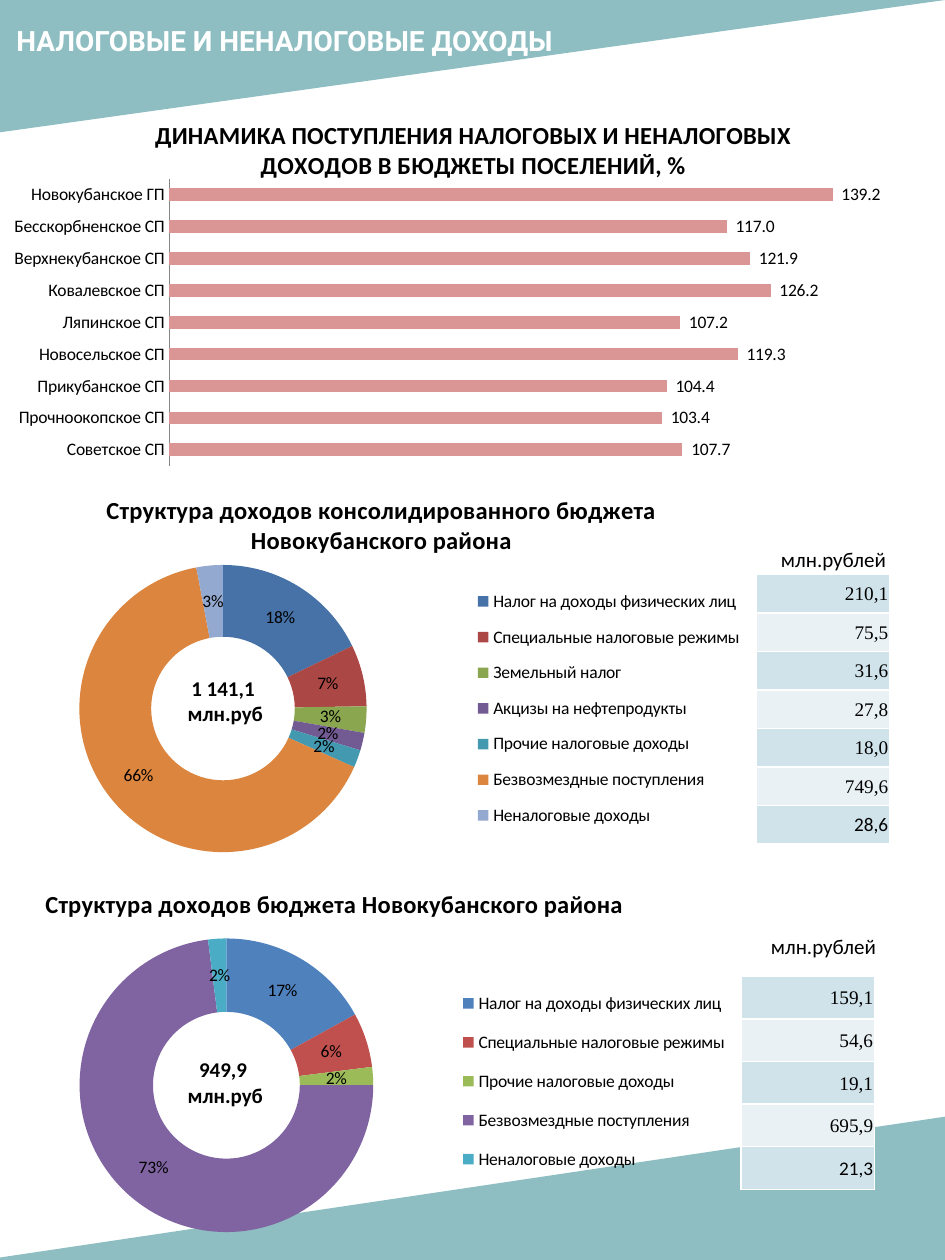
"""Build the tax and non-tax revenue slide."""
from dataclasses import dataclass
from typing import Any, NamedTuple, Optional

from lxml.etree import SubElement
from pptx import Presentation
from pptx.chart.chart import Chart
from pptx.chart.data import CategoryChartData
from pptx.dml.color import RGBColor
from pptx.enum.chart import XL_CHART_TYPE, XL_LABEL_POSITION, XL_LEGEND_POSITION, XL_TICK_LABEL_POSITION, XL_TICK_MARK
from pptx.enum.shapes import MSO_SHAPE
from pptx.enum.text import MSO_ANCHOR, MSO_AUTO_SIZE, PP_ALIGN
from pptx.oxml import parse_xml
from pptx.oxml.ns import nsdecls, qn
from pptx.util import Inches, Pt


@dataclass(frozen=True)
class Theme:
    """Colours, fonts and type sizes of the slide."""
    accent: str = "519AA0"
    white: str = "FFFFFF"
    black: str = "000000"
    axis: str = "868686"
    bar: str = "D99694"
    bands: tuple = ("D0E3EA", "E9F1F5")
    muted: tuple = ("4672A8", "AB4744", "8AA64F", "725A92", "4299B0", "DC853E", "93A9CF")
    bright: tuple = ("4F81BD", "C0504D", "9BBB59", "8064A2", "4BACC6")
    body: str = "Calibri"
    heading: str = "Roboto"
    figures: str = "Times New Roman"
    heading_size: int = 16
    chart_title_size: int = 14
    text_size: int = 12
    table_size: int = 11
    chart_size: int = 10


class Box(NamedTuple):
    """Left, top, width and height, in inches or as chart fractions."""
    left: float
    top: float
    width: float
    height: float

    def lengths(self) -> list:
        """Return the four values as lengths."""
        return [Inches(value) for value in self]


class Triangle(NamedTuple):
    """A corner triangle."""
    box: Box
    flip: str


class Label(NamedTuple):
    """A text box."""
    box: Box
    lines: tuple
    bold: bool
    wrap: bool
    alignment: Any


class Column(NamedTuple):
    """A one-column table of amounts."""
    box: Box
    amounts: tuple


class Graph(NamedTuple):
    """A chart with one series; a legend box makes it a doughnut."""
    box: Box
    title: str
    title_left: float
    title_top: float
    plot: Box
    colors: tuple
    values: dict
    legend: Optional[Box] = None


THEME = Theme()
INCOME_TAX, SPECIAL = "Налог на доходы физических лиц", "Специальные налоговые режимы"
OTHER, GRANTS, NON_TAX = "Прочие налоговые доходы", "Безвозмездные поступления", "Неналоговые доходы"
TRIANGLES = (
    Triangle(Box(0, 0, 7.5, 1.05), "flipH"),
    Triangle(Box(-0.13, 8.86, 7.65, 1.14), "flipV"),
)
UNITS = tuple(Label(Box(left, top, 1.1, 0.3), ("млн.рублей",), False, False, PP_ALIGN.LEFT)
              for left, top in ((6.1, 4.29), (6.02, 7.36)))
TOTALS = tuple(Label(Box(1.33, top, 0.88, 0.5), (total, " млн.руб"), True, True, PP_ALIGN.CENTER)
               for top, total in ((5.31, "1 141,1"), (8.34, "949,9")))
COLUMNS = (
    Column(Box(6, 4.56, 1.06, 2.14), ("210,1", "75,5", "31,6", "27,8", "18,0", "749,6", "28,6")),
    Column(Box(5.88, 7.75, 1.06, 1.69), ("159,1", "54,6", "19,1", "695,9", "21,3")),
)
GRAPHS = (
    Graph(Box(0.03, 3.75, 6, 3.15), "Структура доходов консолидированного бюджета Новокубанского района",
          0.13, 0.04, Box(0.1, 0.23, 0.38, 0.73), THEME.muted,
          {INCOME_TAX: 18, SPECIAL: 7, "Земельный налог": 3, "Акцизы на нефтепродукты": 2,
           OTHER: 2, GRANTS: 66, NON_TAX: 3}, Box(0.62, 0.26, 0.36, 0.67)),
    Graph(Box(0.03, 6.85, 5.89, 3.15), "Структура доходов бюджета Новокубанского района",
          0.05, 0.05, Box(0.1, 0.19, 0.4, 0.74), THEME.bright,
          {INCOME_TAX: 17, SPECIAL: 6, OTHER: 2, GRANTS: 73, NON_TAX: 2}, Box(0.61, 0.28, 0.37, 0.54)),
    Graph(Box(0, 0.78, 7.47, 3.04),
          "ДИНАМИКА ПОСТУПЛЕНИЯ НАЛОГОВЫХ И НЕНАЛОГОВЫХ ДОХОДОВ В БЮДЖЕТЫ ПОСЕЛЕНИЙ, %",
          0.16, 0.04, Box(0.18, 0.21, 0.81, 0.75), (THEME.bar,),
          {"Новокубанское ГП": 139.2, "Бесскорбненское СП": 117, "Верхнекубанское СП": 121.9,
           "Ковалевское СП": 126.2, "Ляпинское СП": 107.2, "Новосельское СП": 119.3,
           "Прикубанское СП": 104.4, "Прочноокопское СП": 103.4, "Советское СП": 107.7}),
)


def apply_format(target: Any, **values: Any) -> None:
    """Set every given attribute on the target."""
    for name, value in values.items():
        setattr(target, name, value)


def format_font(font: Any, name: str, size: int, color: str, bold: bool = False) -> None:
    """Set the face, size, weight and colour of a font."""
    apply_format(font, name=name, size=Pt(size), bold=bold)
    font.color.rgb = RGBColor.from_string(color)


def paint(fill: Any, color: str) -> None:
    """Give a fill one solid colour."""
    fill.solid()
    fill.fore_color.rgb = RGBColor.from_string(color)


def add_triangle(slide: Any, triangle: Triangle) -> None:
    """Draw a translucent corner triangle behind the title."""
    shape = slide.shapes.add_shape(MSO_SHAPE.RIGHT_TRIANGLE, *triangle.box.lengths())
    shape.shadow.inherit = False
    shape.rotation = 180
    shape.line.fill.background()
    paint(shape.fill, THEME.accent)
    SubElement(shape.fill._xPr.find(".//" + qn("a:srgbClr")), qn("a:alpha"), val="64000")
    shape._element.spPr.find(qn("a:xfrm")).set(triangle.flip, "1")
    slide.shapes.title._element.addprevious(shape._element)


def format_title(slide: Any) -> None:
    """Place and format the slide title."""
    title = slide.shapes.title
    left, top, width, height = Box(0.03, 0.14, 4.51, 0.63).lengths()
    apply_format(title, left=left, top=top, width=width, height=height, text="НАЛОГОВЫЕ И НЕНАЛОГОВЫЕ ДОХОДЫ")
    apply_format(title.text_frame, vertical_anchor=MSO_ANCHOR.TOP, auto_size=MSO_AUTO_SIZE.NONE)
    paragraph = title.text_frame.paragraphs[0]
    paragraph.alignment = PP_ALIGN.LEFT
    format_font(paragraph.runs[0].font, THEME.heading, THEME.heading_size, THEME.white, True)


def add_label(slide: Any, label: Label) -> None:
    """Draw a text box with one paragraph per line."""
    frame = slide.shapes.add_textbox(*label.box.lengths()).text_frame
    apply_format(frame, text="\n".join(label.lines), word_wrap=label.wrap, auto_size=MSO_AUTO_SIZE.NONE)
    for paragraph in frame.paragraphs:
        paragraph.alignment = label.alignment
        format_font(paragraph.runs[0].font, THEME.body, THEME.text_size, THEME.black, label.bold)


def add_column(slide: Any, column: Column) -> None:
    """Draw a banded table whose last amount is in the body font."""
    table = slide.shapes.add_table(len(column.amounts), 1, *column.box.lengths()).table
    apply_format(table, first_row=False, horz_banding=False)
    for index, amount in enumerate(column.amounts):
        cell = table.cell(index, 0)
        edge = Inches(0.01)
        apply_format(cell, text=amount, vertical_anchor=MSO_ANCHOR.MIDDLE,
                     margin_left=edge, margin_right=edge, margin_top=edge, margin_bottom=0)
        paragraph = cell.text_frame.paragraphs[0]
        paragraph.alignment = PP_ALIGN.RIGHT
        face = THEME.body if amount == column.amounts[-1] else THEME.figures
        format_font(paragraph.runs[0].font, face, THEME.table_size, THEME.black)
        for position, side in enumerate(("lnL", "lnR", "lnT", "lnB")):
            cell._tc.get_or_add_tcPr().insert(position, parse_xml(
                f'<a:{side} {nsdecls("a")} w="12700"><a:solidFill><a:srgbClr val="{THEME.white}"/>'
                f'</a:solidFill></a:{side}>'))
        paint(cell.fill, THEME.bands[index % 2])


def set_layout(element: Any, predecessor: str, sizes: dict, inner: bool = False) -> None:
    """Place a chart part by fractions of the chart."""
    for old in element.findall(qn("c:layout")):
        element.remove(old)
    target = '<c:layoutTarget val="inner"/>' if inner else ""
    modes = "".join(f'<c:{axis}Mode val="edge"/>' for axis in "xy")
    values = "".join(f'<c:{name} val="{value}"/>' for name, value in sizes.items())
    layout = parse_xml(f'<c:layout {nsdecls("c")}><c:manualLayout>{target}{modes}{values}</c:manualLayout></c:layout>')
    previous = element.find(qn(predecessor)) if predecessor else None
    element.insert(0 if previous is None else element.index(previous) + 1, layout)


def format_bars(chart: Chart, graph: Graph) -> None:
    """Format the bars and axes of a bar chart."""
    apply_format(chart.plots[0], gap_width=150, overlap=-25)
    paint(chart.plots[0].series[0].format.fill, graph.colors[0])
    apply_format(chart.category_axis, reverse_order=True, major_tick_mark=XL_TICK_MARK.NONE,
                 minor_tick_mark=XL_TICK_MARK.NONE, tick_label_position=XL_TICK_LABEL_POSITION.NEXT_TO_AXIS)
    chart.category_axis.format.line.color.rgb = RGBColor.from_string(THEME.axis)
    apply_format(chart.value_axis, visible=False, has_major_gridlines=False, minimum_scale=0, maximum_scale=160)


def format_doughnut(chart: Chart, graph: Graph) -> None:
    """Format the slices and legend of a doughnut chart."""
    for index, color in enumerate(graph.colors):
        paint(chart.plots[0].series[0].points[index].format.fill, color)
    chart.has_legend = True
    apply_format(chart.legend, position=XL_LEGEND_POSITION.RIGHT, include_in_layout=False)
    set_layout(chart.legend._element, "c:legendPos", dict(zip("xywh", graph.legend)))


def add_graph(slide: Any, graph: Graph) -> None:
    """Draw a titled chart with value labels."""
    data = CategoryChartData()
    data.categories = list(graph.values)
    data.add_series("Series 1", list(graph.values.values()))
    kind = XL_CHART_TYPE.DOUGHNUT if graph.legend else XL_CHART_TYPE.BAR_CLUSTERED
    chart = slide.shapes.add_chart(kind, *graph.box.lengths(), data).chart
    format_font(chart.font, THEME.body, THEME.chart_size, THEME.black)
    apply_format(chart, has_legend=False, has_title=True)
    chart.chart_title.text_frame.text = graph.title
    run = chart.chart_title.text_frame.paragraphs[0].runs[0]
    format_font(run.font, THEME.body, THEME.chart_title_size, THEME.black, True)
    set_layout(chart.chart_title._element, "c:tx", {"x": graph.title_left, "y": graph.title_top})
    set_layout(chart._chartSpace.chart.plotArea, "", dict(zip("xywh", graph.plot)), True)
    plot = chart.plots[0]
    apply_format(plot, vary_by_categories=bool(graph.legend), has_data_labels=True)
    apply_format(plot.data_labels, show_value=True, show_percentage=False, number_format_is_linked=False,
                 number_format='0"%"' if graph.legend else "#\\ ##0.0")
    if graph.legend:
        format_doughnut(chart, graph)
    else:
        plot.data_labels.position = XL_LABEL_POSITION.OUTSIDE_END
        format_bars(chart, graph)


def main() -> None:
    """Build and save the presentation."""
    presentation = Presentation()
    apply_format(presentation, slide_width=Inches(7.5), slide_height=Inches(10))
    slide = presentation.slides.add_slide(presentation.slide_layouts[5])
    format_title(slide)
    for draw, items in ((add_triangle, TRIANGLES), (add_label, UNITS), (add_column, COLUMNS),
                        (add_graph, GRAPHS), (add_label, TOTALS)):
        for item in items:
            draw(slide, item)
    presentation.save("out.pptx")


if __name__ == "__main__":
    main()
